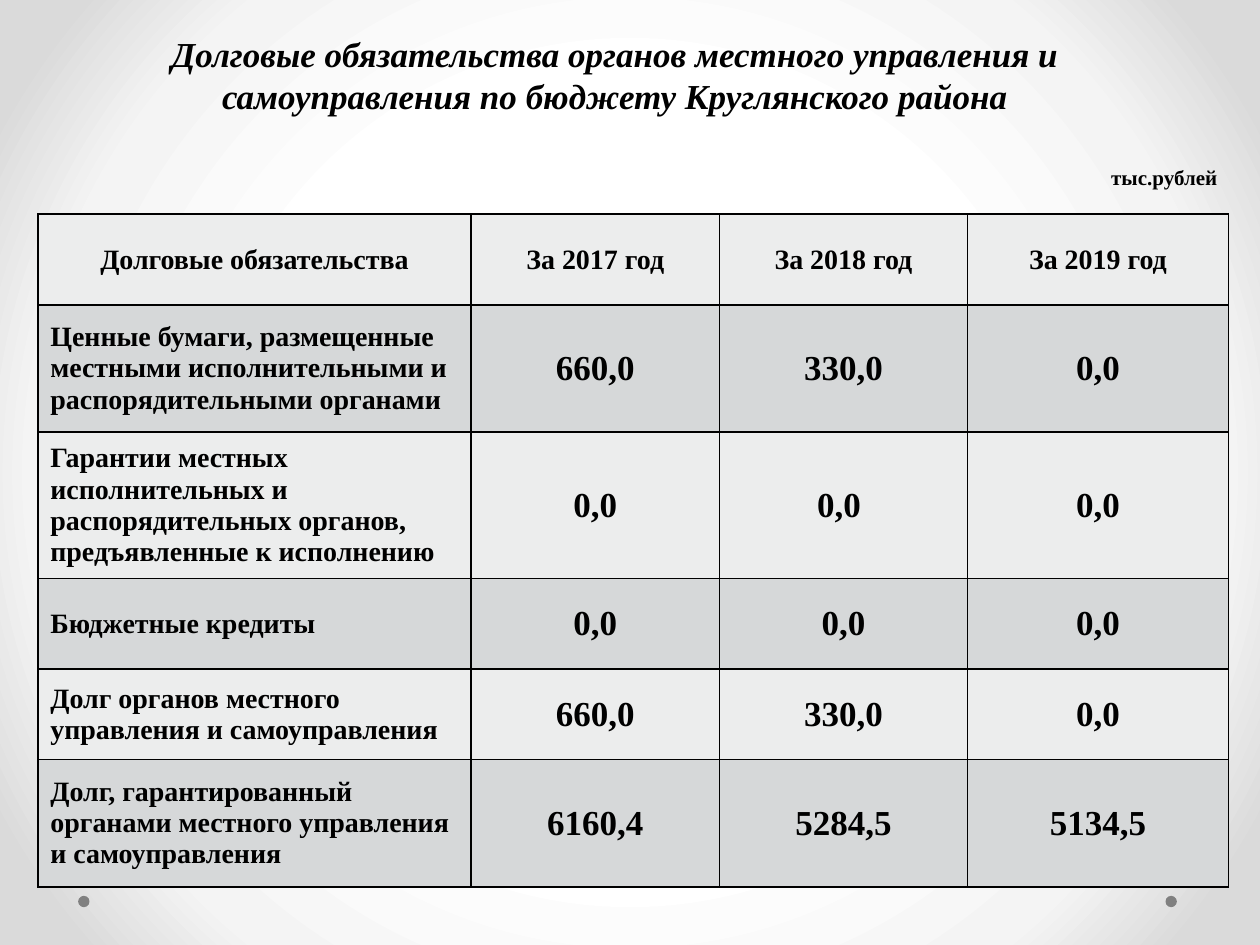
from lxml import etree
from pptx import Presentation, util as u
from pptx.dml.color import RGBColor
from pptx.enum import shapes, text
from pptx.oxml import parse_xml
from pptx.oxml.ns import nsdecls, qn

TITLE = ("Долговые обязательства органов местного управления и "
         "самоуправления по бюджету Круглянского района")
UNITS = "тыс.рублей"
ROWS = [
    ("Долговые обязательства", "За 2017 год", "За 2018 год", "За 2019 год"),
    ("Ценные бумаги, размещенные местными исполнительными и распорядительными органами",
     "660,0", "330,0", "0,0"),
    ("Гарантии местных исполнительных и распорядительных органов, предъявленные к исполнению",
     "0,0", "0,0 ", "0,0"),
    ("Бюджетные кредиты", "0,0", "0,0", "0,0"),
    ("Долг органов местного управления и самоуправления", "660,0", "330,0", "0,0"),
    ("Долг, гарантированный органами местного управления и самоуправления",
     "6160,4", "5284,5", "5134,5"),
]
COLUMN_WIDTHS = (3.44, 1.97, 1.97, 2.07)
ROW_HEIGHTS = (0.72, 1.01, 1.16, 0.72, 0.72, 1.01)
TABLE_LEFT, TABLE_TOP = 0.3, 1.7
DOT_LEFTS, DOT_TOP, DOT_SIZE = (0.62, 9.25), 7.11, 0.09
BACKGROUND_STOPS = ((50, "FFFFFF"), (76, "F4F4F4"), (92, "DADADA"))

FONT = "Times New Roman"
BLACK = RGBColor(0x00, 0x00, 0x00)
DOT_GRAY = RGBColor(0x80, 0x80, 0x80)
BANDS = (RGBColor(0xEC, 0xED, 0xED), RGBColor(0xD6, 0xD8, 0xD9))
ALIGN = text.PP_ALIGN


def inches(*lengths):
    return [u.Inches(length) for length in lengths]


def write(frame, words, size, alignment, italic=False):
    frame.text = words
    paragraph = frame.paragraphs[0]
    paragraph.alignment = alignment
    font = paragraph.font
    font.name, font.size, font.bold, font.italic = FONT, u.Pt(size), True, italic
    font.color.rgb = BLACK


def paint_background(slide):
    """Radial gradient, which python-pptx can only start as a linear one."""
    slide.background.fill.gradient()
    gradient = slide.element.find(".//" + qn("a:gradFill"))
    stops = "".join(f'<a:gs pos="{share * 1000}"><a:srgbClr val="{color}"/></a:gs>'
                    for share, color in BACKGROUND_STOPS)
    gradient.getparent().replace(gradient, parse_xml(
        f'<a:gradFill {nsdecls("a")} rotWithShape="1"><a:gsLst>{stops}</a:gsLst>'
        '<a:path path="circle"><a:fillToRect l="50000" t="50000" r="50000" b="50000"/>'
        '</a:path></a:gradFill>'))


def add_borders(cell):
    properties = cell._tc.get_or_add_tcPr()
    for index, side in enumerate(("lnL", "lnR", "lnT", "lnB")):
        line = etree.Element(qn(f"a:{side}"), w=str(u.Pt(1)))
        fill = etree.SubElement(line, qn("a:solidFill"))
        etree.SubElement(fill, qn("a:srgbClr"), val=str(BLACK))
        properties.insert(index, line)


def add_debt_table(slide):
    table = slide.shapes.add_table(
        len(ROWS), len(COLUMN_WIDTHS),
        *inches(TABLE_LEFT, TABLE_TOP, sum(COLUMN_WIDTHS), sum(ROW_HEIGHTS))).table
    for column, width in zip(table.columns, COLUMN_WIDTHS):
        column.width = u.Inches(width)
    for row, height in zip(table.rows, ROW_HEIGHTS):
        row.height = u.Inches(height)
    for r, row in enumerate(ROWS):
        for c, words in enumerate(row):
            cell = table.cell(r, c)
            is_label, is_value = r and c == 0, r and c
            write(cell.text_frame, words, 20 if is_value else 16,
                  ALIGN.LEFT if is_label else ALIGN.CENTER)
            cell.vertical_anchor = text.MSO_ANCHOR.MIDDLE
            cell.fill.solid()
            cell.fill.fore_color.rgb = BANDS[r % 2]
            add_borders(cell)


def main():
    presentation = Presentation()
    presentation.slide_width, presentation.slide_height = inches(10, 7.5)
    slide = presentation.slides.add_slide(presentation.slide_layouts[5])
    paint_background(slide)

    for left in DOT_LEFTS:
        dot = slide.shapes.add_shape(shapes.MSO_SHAPE.OVAL,
                                     *inches(left, DOT_TOP, DOT_SIZE, DOT_SIZE))
        dot.shadow.inherit = False
        dot.fill.solid()
        dot.fill.fore_color.rgb = DOT_GRAY
        dot.line.fill.background()

    title = slide.shapes.title
    title.left, title.top, title.width, title.height = inches(0.51, 0.21, 8.74, 0.77)
    title.text_frame.vertical_anchor = text.MSO_ANCHOR.MIDDLE
    write(title.text_frame, TITLE, 20, ALIGN.CENTER, italic=True)

    add_debt_table(slide)

    units = slide.shapes.add_textbox(*inches(8.71, 1.26, 1.05, 0.3))
    units.text_frame.word_wrap = False
    write(units.text_frame, UNITS, 12, ALIGN.RIGHT)

    presentation.save("out.pptx")


if __name__ == "__main__":
    main()
